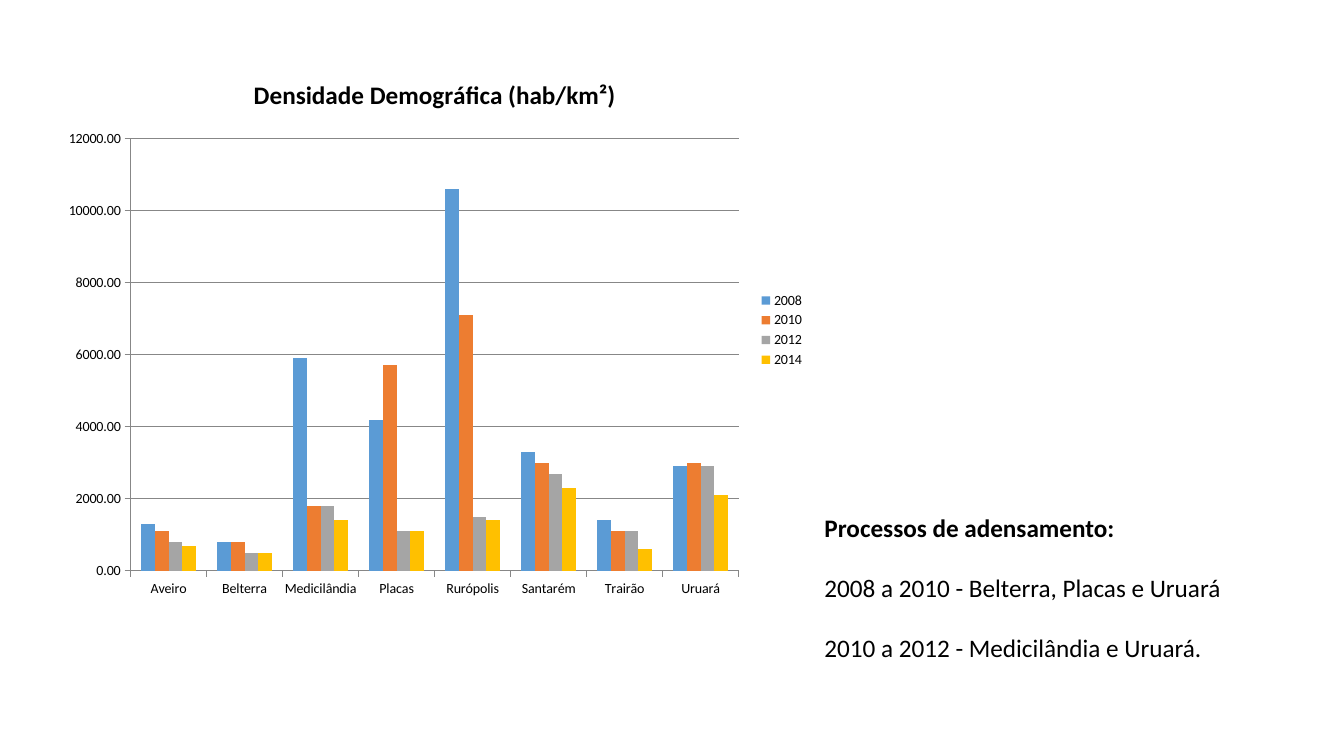
from dataclasses import dataclass
from lxml.etree import SubElement
from pptx import Presentation
from pptx.chart.data import CategoryChartData
from pptx.dml.color import RGBColor
from pptx.enum.chart import XL_CHART_TYPE, XL_LEGEND_POSITION, XL_TICK_MARK
from pptx.enum.text import PP_ALIGN
from pptx.oxml import parse_xml
from pptx.oxml.ns import nsdecls, qn
from pptx.util import Pt

TITLE = "Densidade Demográfica (hab/km²)"
CITIES = ["Aveiro", "Belterra", "Medicilândia", "Placas",
          "Rurópolis", "Santarém", "Trairão", "Uruará"]
DENSITY = {
    "2008": [1300, 800, 5900, 4200, 10600, 3300, 1400, 2900],
    "2010": [1100, 800, 1800, 5700, 7100, 3000, 1100, 3000],
    "2012": [800, 500, 1800, 1100, 1500, 2700, 1100, 2900],
    "2014": [700, 500, 1400, 1100, 1400, 2300, 600, 2100],
}
NOTES = [
    ("Processos de adensamento:", True),
    ("2008 a 2010 - Belterra, Placas e Uruará", False),
    ("2010 a 2012 - Medicilândia e Uruará.", False),
]
CHART_AREA = (39, 40.3, 543, 391)
NOTES_AREA = (581.8, 362.2, 372, 138.2)
PLOT_AREA = {"x": 0.1, "y": 0.15, "w": 0.8, "h": 0.79}


@dataclass(frozen=True)
class Theme:
    font: str = "Calibri"
    text: str = "000000"
    line: str = "878787"
    series: tuple = ("5B9BD5", "ED7D31", "A5A5A5", "FFC000")
    heading_size: float = 18
    label_size: float = 10
    note_gap: float = 21.5


THEME = Theme()


def write(para, text, size, bold=False, align=None, gap=0):
    para.alignment = align
    para.space_after = Pt(gap)
    span = para.add_run()
    span.text = text
    style(span.font, size, bold)


def style(font, size, bold=False):
    font.name = THEME.font
    font.size = Pt(size)
    font.bold = bold
    font.color.rgb = RGBColor.from_string(THEME.text)


def draw_line(line):
    line.color.rgb = RGBColor.from_string(THEME.line)
    line.width = Pt(0.75)


def place_plot(chart):
    plot_area = chart.element.find(".//" + qn("c:plotArea"))
    for layout in plot_area.findall(qn("c:layout")):
        plot_area.remove(layout)
    layout = parse_xml(f"<c:layout {nsdecls('c')}><c:manualLayout/></c:layout>")
    settings = {"layoutTarget": "inner", "xMode": "edge", "yMode": "edge", **PLOT_AREA}
    for name, value in settings.items():
        SubElement(layout[0], qn(f"c:{name}")).set("val", str(value))
    plot_area.insert(0, layout)


def add_density_chart(page):
    data = CategoryChartData(number_format="0.00")
    data.categories = CITIES
    for year, values in DENSITY.items():
        data.add_series(year, values)
    chart = page.shapes.add_chart(
        XL_CHART_TYPE.COLUMN_CLUSTERED, *map(Pt, CHART_AREA), data).chart
    style(chart.font, THEME.label_size)
    chart.has_title = True
    write(chart.chart_title.text_frame.paragraphs[0], TITLE,
          THEME.heading_size, bold=True)
    chart.chart_title.include_in_layout = False
    chart.has_legend = True
    chart.legend.position = XL_LEGEND_POSITION.RIGHT
    chart.legend.include_in_layout = False

    plot = chart.plots[0]
    plot.gap_width = 150
    plot.overlap = 0
    plot.vary_by_categories = False
    for series, color in zip(plot.series, THEME.series):
        series.format.fill.solid()
        series.format.fill.fore_color.rgb = RGBColor.from_string(color)

    for axis in (chart.category_axis, chart.value_axis):
        axis.major_tick_mark = XL_TICK_MARK.OUTSIDE
        axis.minor_tick_mark = XL_TICK_MARK.NONE
        draw_line(axis.format.line)
    values = chart.value_axis
    values.minimum_scale, values.maximum_scale, values.major_unit = 0, 12000, 2000
    values.tick_labels.number_format = "0.00"
    values.tick_labels.number_format_is_linked = False
    values.has_major_gridlines = True
    draw_line(values.major_gridlines.format.line)
    place_plot(chart)


def add_notes(page):
    box = page.shapes.add_textbox(*map(Pt, NOTES_AREA))
    frame = box.text_frame
    frame.word_wrap = True
    for index, (text, bold) in enumerate(NOTES):
        para = frame.add_paragraph() if index else frame.paragraphs[0]
        write(para, text, THEME.heading_size, bold=bold,
              align=PP_ALIGN.JUSTIFY, gap=THEME.note_gap)


def main():
    deck = Presentation()
    deck.slide_width, deck.slide_height = Pt(960), Pt(540)
    page = deck.slides.add_slide(deck.slide_layouts[6])
    add_notes(page)
    add_density_chart(page)
    deck.save("out.pptx")


if __name__ == "__main__":
    main()
